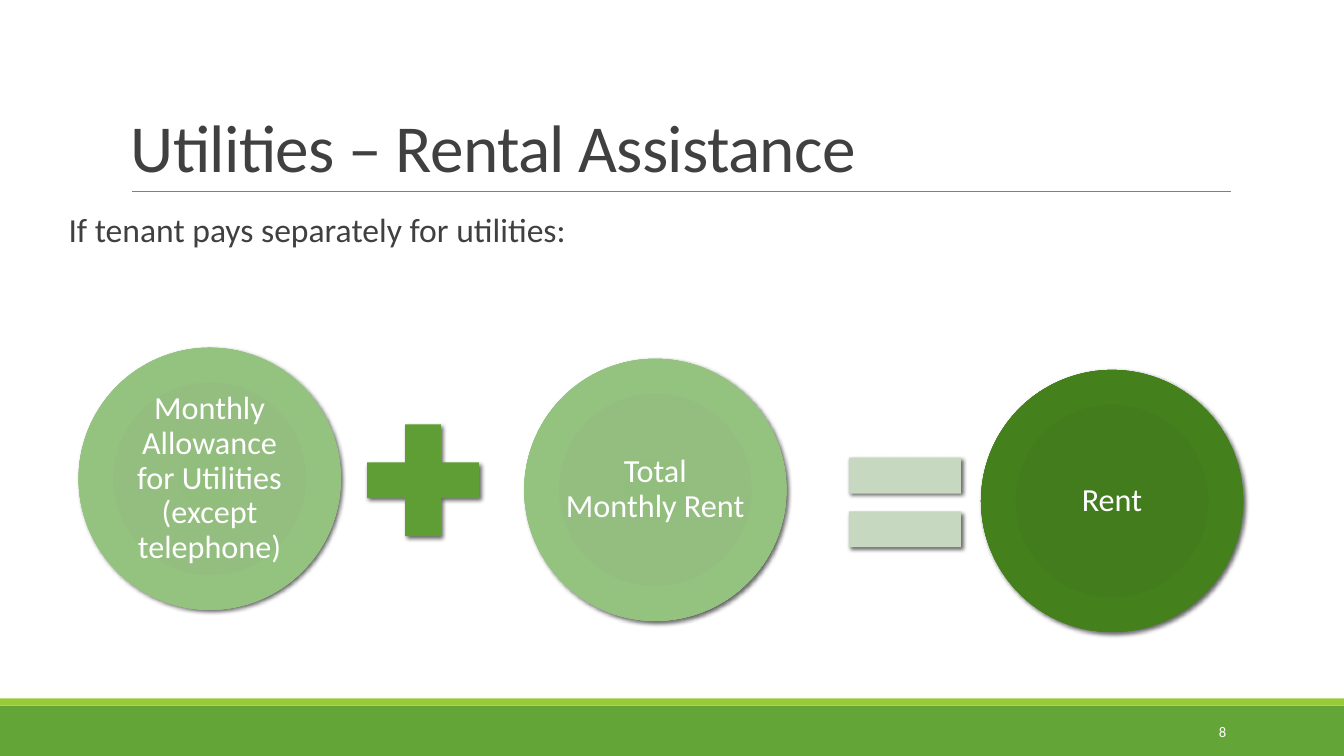
from dataclasses import dataclass

from lxml import etree
from pptx import Presentation
from pptx.dml.color import RGBColor
from pptx.enum.shapes import MSO_CONNECTOR, MSO_SHAPE
from pptx.enum.text import MSO_ANCHOR, PP_ALIGN
from pptx.oxml import parse_xml
from pptx.oxml.ns import nsdecls, qn
from pptx.util import Inches, Pt

RECT, CIRCLE = MSO_SHAPE.RECTANGLE, MSO_SHAPE.OVAL
PLUS, EQUALS = MSO_SHAPE.MATH_PLUS, MSO_SHAPE.MATH_EQUAL
STRAIGHT = MSO_CONNECTOR.STRAIGHT
TOP, MIDDLE, BOTTOM = MSO_ANCHOR.TOP, MSO_ANCHOR.MIDDLE, MSO_ANCHOR.BOTTOM
LEFT, CENTER, RIGHT = PP_ALIGN.LEFT, PP_ALIGN.CENTER, PP_ALIGN.RIGHT


@dataclass(frozen=True)
class Theme:
    font: str = "Calibri"
    ink: str = "404040"
    white: str = "FFFFFF"
    rule: str = "808080"
    footer: str = "63A537"
    accent: str = "99CB38"
    plus: str = "5F9E35"
    equals: str = "C6D8BF"
    addend: tuple = ("91BE7C", "93BE7F", "94C37F", "9DC68B")
    total: tuple = ("427D1B", "437C1D", "44801B", "487E25")
    stops: tuple = (0, 34, 70, 100)
    title_size: float = 48
    body_size: float = 24
    term_size: float = 23
    number_size: float = 10.5


THEME = Theme()
CIRCLE_SIZE = 2.6
OPERATOR_SIZE = 1.51


def write(holder, text, size, color, align=LEFT, anchor=TOP,
          insets=(0.1, 0.05, 0.1, 0.05), spacing=None):
    """Fill a shape or text box with one formatted paragraph."""
    frame = holder.text_frame
    sides = ("margin_left", "margin_top", "margin_right", "margin_bottom")
    frame_format = {"word_wrap": True, "vertical_anchor": anchor}
    frame_format.update(zip(sides, map(Inches, insets)))
    for name, value in frame_format.items():
        setattr(frame, name, value)

    paragraph = frame.paragraphs[0]
    for name, value in {"alignment": align, **(spacing or {})}.items():
        setattr(paragraph, name, value)

    run = paragraph.add_run()
    run.text = text
    for name, value in {"name": THEME.font, "size": Pt(size)}.items():
        setattr(run.font, name, value)
    run.font.color.rgb = RGBColor.from_string(color)
    return run


def add_text(slide, box, text, size, color, **layout):
    holder = slide.shapes.add_textbox(*map(Inches, box))
    return write(holder, text, size, color, **layout)


def add_solid(slide, kind, box, color):
    shape = slide.shapes.add_shape(kind, *map(Inches, box))
    shape.fill.solid()
    shape.fill.fore_color.rgb = RGBColor.from_string(color)
    shape.line.fill.background()
    shape.shadow.inherit = False
    return shape


def add_rule(slide, left, right, y):
    rule = slide.shapes.add_connector(
        STRAIGHT, Inches(left), Inches(y), Inches(right), Inches(y))
    rule.line.color.rgb = RGBColor.from_string(THEME.rule)
    rule.line.width = Pt(0.5)
    etree.SubElement(rule._element.spPr, qn("a:effectLst"))


def cast_shadow(shape):
    effects = shape._element.spPr.find(qn("a:effectLst"))
    effects.append(parse_xml(
        f'<a:outerShdw {nsdecls("a")} blurRad="{Pt(3)}" dist="{Pt(2)}" '
        'dir="2700000" algn="br" rotWithShape="0"><a:srgbClr val="000000">'
        '<a:alpha val="60000"/></a:srgbClr></a:outerShdw>'))


def shade_radially(shape, colors):
    stops = "".join(
        f'<a:gs pos="{stop * 1000}"><a:srgbClr val="{color}"/></a:gs>'
        for stop, color in zip(THEME.stops, colors))
    gradient = parse_xml(
        f'<a:gradFill {nsdecls("a")} rotWithShape="1"><a:gsLst>{stops}</a:gsLst>'
        '<a:path path="circle"><a:fillToRect l="100000" t="100000" '
        'r="100000" b="100000"/></a:path></a:gradFill>')
    properties = shape._element.spPr
    properties.replace(properties.find(qn("a:solidFill")), gradient)


def add_term(slide, left, top, text, colors):
    circle = add_solid(
        slide, CIRCLE, (left, top, CIRCLE_SIZE, CIRCLE_SIZE), colors[0])
    shade_radially(circle, colors)
    cast_shadow(circle)
    write(circle, text, THEME.term_size, THEME.white, align=CENTER,
          anchor=MIDDLE, insets=(0.03,) * 4, spacing={"line_spacing": 0.9})


def add_operator(slide, kind, left, top, color):
    operator = add_solid(
        slide, kind, (left, top, OPERATOR_SIZE, OPERATOR_SIZE), color)
    cast_shadow(operator)


def main():
    deck = Presentation()
    deck.slide_width, deck.slide_height = Inches(13.33), Inches(7.5)
    slide = deck.slides.add_slide(deck.slide_layouts[6])

    # Footer bands and title rule
    add_solid(slide, RECT, (0, 7, 13.33, 0.5), THEME.footer)
    add_solid(slide, RECT, (0, 6.93, 13.33, 0.07), THEME.accent)
    add_rule(slide, 1.31, 12.21, 1.9)

    # Title and lead-in
    title = add_text(slide, (1.2, 0.31, 11, 1.59),
                     "Utilities – Rental Assistance", THEME.title_size,
                     THEME.ink, anchor=BOTTOM, spacing={"line_spacing": 0.85})
    title.font._element.set("spc", "-50")
    add_text(slide, (0.68, 2.07, 11.89, 1.29),
             "If tenant pays separately for utilities:", THEME.body_size,
             THEME.ink, insets=(0, 0.05, 0, 0.05),
             spacing={"line_spacing": 0.9, "space_before": Pt(12),
                      "space_after": Pt(2)})

    # Equation: allowance + monthly rent = rent
    add_term(slide, 9.73, 3.67, "Rent", THEME.total)
    add_operator(slide, PLUS, 3.44, 4.01, THEME.plus)
    add_term(slide, 5.2, 3.56, "Total Monthly Rent", THEME.addend)
    add_operator(slide, EQUALS, 8.22, 4.23, THEME.equals)
    add_term(slide, 0.78, 3.45,
             "Monthly Allowance for Utilities (except telephone)", THEME.addend)

    # Slide number
    add_text(slide, (10.83, 7.06, 1.43, 0.4), "8", THEME.number_size,
             THEME.white, align=RIGHT, anchor=MIDDLE)

    deck.save("out.pptx")


if __name__ == "__main__":
    main()
